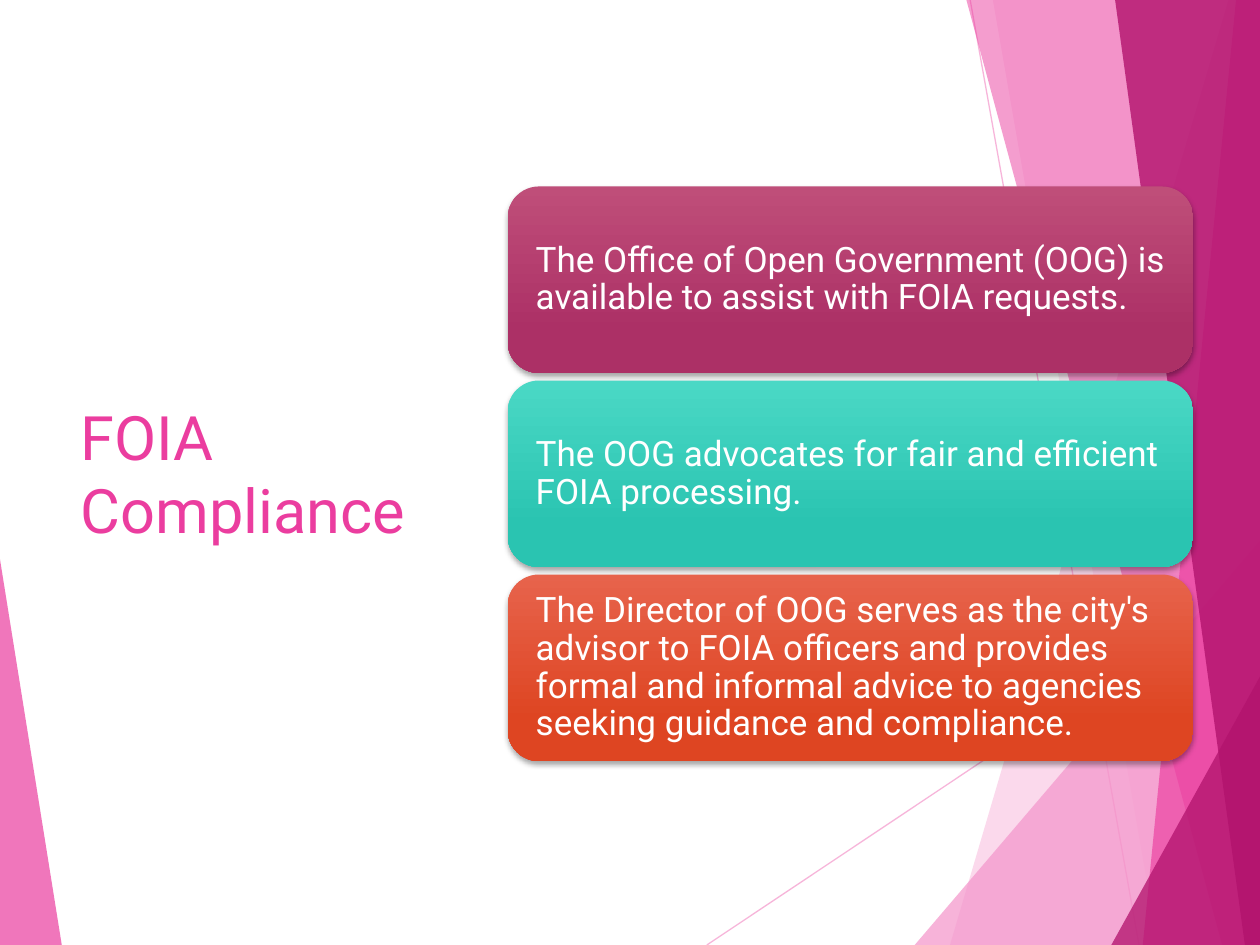
from lxml.etree import SubElement as Sub
from pptx import Presentation
from pptx.dml.color import RGBColor as RGB
from pptx.enum.shapes import MSO_CONNECTOR as Conn, MSO_SHAPE as Shape
from pptx.enum.text import MSO_ANCHOR as Anchor, MSO_AUTO_SIZE as Fit, PP_ALIGN as Align
from pptx.oxml.ns import qn
from pptx.util import Inches, Pt

W, H = 10, 7.5
FONT = "Roboto"
WHITE = RGB(0xFF, 0xFF, 0xFF)
PALE = RGB(0xF4, 0x96, 0xCB)
PINK = RGB(0xEB, 0x3D, 0x9F)
DEEP = RGB(0xB2, 0x13, 0x6D)

# Decoration: line ends, then facets as colour, opacity and corners
LINES = [((5.61, H), (W, 4.57)), ((7.7, 0), (9.04, H))]
FACETS = [
    (PALE, 36, [(9.75, 0), (7.54, H), (W, H), (W, 0)]),
    (PALE, 20, [(7.88, 0), (9.19, H), (W, H), (W, 0)]),
    (PALE, 72, [(7.26, H), (W, 4.29), (W, H)]),
    (PINK, 50, [(7.67, 0), (9.7, H), (W, H), (W, 0)]),
    (PINK, 66, [(9.81, 0), (9.07, H), (W, H), (W, 0)]),
    (DEEP, 80, [(8.85, 0), (9.88, H), (W, H), (W, 0)]),
    (DEEP, 76, [(8.82, H), (W, 5.37), (W, H)]),
    (PINK, 70, [(0, 4.44), (0.49, H), (0, H)]),
]

# Cards: gradient top, gradient foot, text
CARDS = [
    (RGB(0xBF, 0x4E, 0x79), RGB(0xAC, 0x30, 0x66),
     "The Office of Open Government (OOG) is available to assist with FOIA requests."),
    (RGB(0x4A, 0xD8, 0xC5), RGB(0x2A, 0xC4, 0xB1),
     "The OOG advocates for fair and efficient FOIA processing."),
    (RGB(0xE7, 0x63, 0x4C), RGB(0xDE, 0x45, 0x22),
     "The Director of OOG serves as the city's advisor to FOIA officers and provides "
     "formal and informal advice to agencies seeking guidance and compliance."),
]
LEFT, TOP, WIDE, HIGH, GAP = 4.03, 1.48, 5.44, 1.48, 0.06


def fade(shape, share):
    """Set the opacity of the shape's one solid colour, in percent."""
    color = next(shape._element.spPr.iter(qn("a:srgbClr")))
    Sub(color, qn("a:alpha"), val=str(share * 1000))


def add_line(slide, start, end):
    ends = [Inches(n) for n in start + end]
    line = slide.shapes.add_connector(Conn.STRAIGHT, *ends)
    line.line.color.rgb = PALE
    line.line.width = Pt(0.75)
    fade(line, 70)
    Sub(line._element.spPr, qn("a:effectLst"))


def add_facet(slide, color, share, corners):
    first, *rest = [(Inches(x), Inches(y)) for x, y in corners]
    pen = slide.shapes.build_freeform(*first)
    pen.add_line_segments(rest, close=True)
    facet = pen.convert_to_shape()
    facet.shadow.inherit = False
    facet.fill.solid()
    facet.fill.fore_color.rgb = color
    fade(facet, share)
    facet.line.fill.background()


def add_shadow(shape):
    shape.shadow.inherit = False
    effects = shape._element.spPr.find(qn("a:effectLst"))
    drop = Sub(effects, qn("a:outerShdw"), blurRad=str(Pt(3)), dist=str(Pt(2)),
               dir="5400000", rotWithShape="0")
    color = Sub(drop, qn("a:srgbClr"), val="000000")
    Sub(color, qn("a:alpha"), val="35000")


def style(para, size, color):
    para.alignment = Align.LEFT
    para.font.name = FONT
    para.font.size = Pt(size)
    para.font.color.rgb = color


def add_card(slide, row, light, dark, text):
    top = TOP + row * (HIGH + GAP)
    box = [Inches(n) for n in (LEFT, top, WIDE, HIGH)]
    card = slide.shapes.add_shape(Shape.ROUNDED_RECTANGLE, *box)
    card.fill.gradient()
    card.fill.gradient_angle = 270
    for stop, color, place in zip(card.fill.gradient_stops, (light, dark), (0, 0.78)):
        stop.color.rgb = color
        stop.position = place
    card.line.fill.background()
    add_shadow(card)
    frame = card.text_frame
    frame.word_wrap = True
    frame.vertical_anchor = Anchor.MIDDLE
    frame.margin_left = frame.margin_right = Inches(0.15)
    frame.margin_top = frame.margin_bottom = Inches(0.15)
    frame.text = text
    para = frame.paragraphs[0]
    para.line_spacing = 0.9
    style(para, 20, WHITE)


def set_title(slide, text):
    title = slide.shapes.title
    title.left, title.top = Inches(0.54), Inches(1.51)
    title.width, title.height = Inches(2.91), Inches(4.48)
    frame = title.text_frame
    frame.text = text
    frame.word_wrap = True
    frame.auto_size = Fit.NONE
    frame.vertical_anchor = Anchor.MIDDLE
    style(frame.paragraphs[0], 35, PINK)
    # Bring the title in front of the decoration
    slide.shapes._spTree.append(title._element)


def main():
    deck = Presentation()
    deck.slide_width, deck.slide_height = Inches(W), Inches(H)
    slide = deck.slides.add_slide(deck.slide_layouts[5])
    for start, end in LINES:
        add_line(slide, start, end)
    for facet in FACETS:
        add_facet(slide, *facet)
    set_title(slide, "FOIA Compliance")
    for row, card in enumerate(CARDS):
        add_card(slide, row, *card)
    deck.save("out.pptx")


if __name__ == "__main__":
    main()
